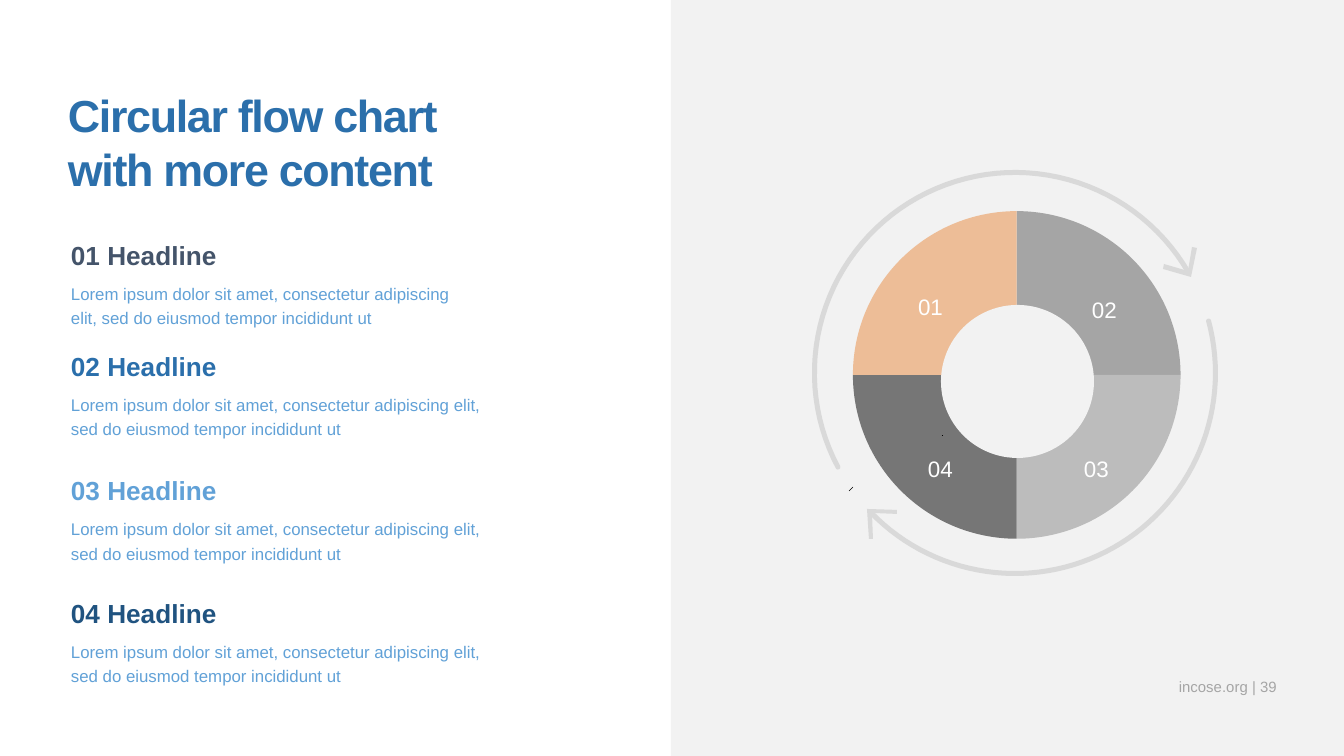
"""Build a slide with a four-part circular flow chart and matching headlines."""
import math
from dataclasses import dataclass
from typing import Any

from lxml import etree
from pptx import Presentation
from pptx import util as u
from pptx.chart import data as chart_data
from pptx.dml import color
from pptx.enum import chart as charts, shapes, text
from pptx.oxml import ns

SCALE = 914400 / 134.4
LOREM = ("Lorem ipsum dolor sit amet, consectetur adipiscing elit, "
         "sed do eiusmod tempor incididunt ut")


@dataclass(frozen=True)
class Theme:
    font: str = "Arial"
    white: str = "FFFFFF"
    panel: str = "F2F2F2"
    arrow: str = "D9D9D9"
    tick: str = "000000"
    title: str = "2B6FAB"
    body: str = "61A1D7"
    footer: str = "A5A5A5"
    slices: tuple = ("A5A5A5", "BCBCBC", "767676", "EDBD97")
    title_size: float = 24
    headline_size: float = 14
    label_size: float = 12
    chart_size: float = 10
    body_size: float = 9
    footer_size: float = 8


@dataclass(frozen=True)
class Box:
    left: int
    top: int
    width: int
    height: int

    def emu(self) -> tuple:
        return tuple(px(value) for value in (self.left, self.top, self.width, self.height))


@dataclass(frozen=True)
class Style:
    size: float
    color: str
    bold: bool = False
    align: Any = text.PP_ALIGN.LEFT
    anchor: Any = text.MSO_ANCHOR.TOP
    auto_size: Any = text.MSO_AUTO_SIZE.NONE
    line_spacing: Any = 1.0
    inset: tuple = (0, 0)
    tracking: int = 0


@dataclass(frozen=True)
class Topic:
    headline: str
    color: str
    top: int
    body_top: int
    body_width: int = 418


@dataclass(frozen=True)
class Label:
    words: str
    box: Box


@dataclass(frozen=True)
class FlowArrow:
    start: float
    end: float
    head: tuple


@dataclass(frozen=True)
class Tick:
    start: tuple
    end: tuple


THEME = Theme()
GROW = text.MSO_AUTO_SIZE.SHAPE_TO_FIT_TEXT
TITLE = Style(THEME.title_size, THEME.title, True, line_spacing=u.Pt(29), tracking=-70)
BODY = Style(THEME.body_size, THEME.body, auto_size=GROW, line_spacing=1.2, inset=(4, 7))
LABEL = Style(THEME.label_size, THEME.white, align=text.PP_ALIGN.CENTER,
              anchor=text.MSO_ANCHOR.MIDDLE, inset=(9, 5))
FOOTER = Style(THEME.footer_size, THEME.footer, align=text.PP_ALIGN.RIGHT,
               anchor=text.MSO_ANCHOR.BOTTOM, line_spacing=1.5)

TOPICS = (Topic("01 Headline", "44546A", 236, 273, 414),
          Topic("02 Headline", "2B6FAB", 347, 384),
          Topic("03 Headline", "61A1D7", 471, 508),
          Topic("04 Headline", "205380", 594, 631))
LABELS = (Label("01", Box(891, 273, 79, 68)), Label("02", Box(1071, 276, 67, 67)),
          Label("03", Box(1063, 435, 67, 67)), Label("04", Box(907, 435, 67, 67)))
FLOW_ARROWS = (
    FlowArrow(-118, 60, ((1163, 269), (1164, 264), (1188, 271),
                         (1192, 247), (1197, 248), (1191, 277))),
    FlowArrow(75, 226, ((897, 510), (897, 514), (872, 513),
                        (873, 539), (869, 539), (867, 509))))
TICKS = (Tick((849, 491), (853, 487)), Tick((942, 435), (943, 435)))


def px(value: float) -> int:
    return round(value * SCALE)


def rgb(code: str) -> color.RGBColor:
    return color.RGBColor.from_string(code)


def apply_format(target: Any, values: dict) -> None:
    for name, value in values.items():
        setattr(target, name, value)


def paint(shape: Any, fill: str) -> None:
    shape.shadow.inherit = False
    shape.fill.solid()
    shape.fill.fore_color.rgb = rgb(fill)
    shape.line.fill.background()


def write(shape: Any, words: str, style: Style) -> None:
    across, down = (px(value) for value in style.inset)
    frame = shape.text_frame
    apply_format(frame, {
        "word_wrap": True, "auto_size": style.auto_size, "vertical_anchor": style.anchor,
        "margin_left": across, "margin_right": across,
        "margin_top": down, "margin_bottom": down})
    paragraph = frame.paragraphs[0]
    apply_format(paragraph, {"alignment": style.align, "line_spacing": style.line_spacing})
    run = paragraph.add_run()
    run.text = words
    apply_format(run.font, {"name": THEME.font, "size": u.Pt(style.size), "bold": style.bold})
    run.font.color.rgb = rgb(style.color)
    if style.tracking:
        run.font._element.set("spc", str(style.tracking))


def add_text(slide: Any, box: Box, words: str, style: Style) -> None:
    write(slide.shapes.add_textbox(*box.emu()), words, style)


def add_topic(slide: Any, topic: Topic) -> None:
    headline = Style(THEME.headline_size, topic.color, True, auto_size=GROW,
                     line_spacing=0.9, inset=(4, 7))
    add_text(slide, Box(67, topic.top, 276, 42), topic.headline, headline)
    add_text(slide, Box(67, topic.body_top, topic.body_width, 62), LOREM, BODY)


def add_label(slide: Any, label: Label) -> None:
    shape = slide.shapes.add_shape(shapes.MSO_SHAPE.OVAL, *label.box.emu())
    shape.shadow.inherit = False
    shape.fill.background()
    shape.line.fill.background()
    write(shape, label.words, LABEL)


def add_filled(slide: Any, kind: Any, box: Box, fill: str) -> None:
    paint(slide.shapes.add_shape(kind, *box.emu()), fill)


def add_polygon(slide: Any, points: list, fill: str) -> None:
    first, *rest = [(px(x), px(y)) for x, y in points]
    builder = slide.shapes.build_freeform(*first, scale=1.0)
    builder.add_line_segments(rest, close=True)
    paint(builder.convert_to_shape(), fill)


def arc(center: tuple, radius: float, start: float, end: float, steps: int) -> list:
    angles = [math.radians(start + (end - start) * i / steps) for i in range(steps + 1)]
    return [(center[0] + radius * math.sin(a), center[1] - radius * math.cos(a)) for a in angles]


def add_flow_arrow(slide: Any, arrow: FlowArrow) -> None:
    center, radius, half = (1015, 373), 200.5, 2.5
    start, end = arrow.start, arrow.end
    tail, tip = (arc(center, radius, angle, angle, 1)[0] for angle in (start, end))
    band = (arc(center, radius + half, start, end, 60) + arc(tip, half, end, end + 180, 6)
            + arc(center, radius - half, end, start, 60)
            + arc(tail, half, start + 180, start + 360, 6))
    add_polygon(slide, band, THEME.arrow)
    add_polygon(slide, list(arrow.head), THEME.arrow)


def add_tick(slide: Any, tick: Tick) -> None:
    ends = [px(value) for value in tick.start + tick.end]
    connector = slide.shapes.add_connector(shapes.MSO_CONNECTOR.STRAIGHT, *ends)
    connector.line.width = u.Pt(0.25)
    connector.line.color.rgb = rgb(THEME.tick)
    etree.SubElement(connector._element.spPr, ns.qn("a:effectLst"))


def add_pie(slide: Any, box: Box) -> None:
    values = chart_data.CategoryChartData()
    values.categories = ["1", "2", "3", "4"]
    values.add_series("Series 1", [25] * 4)
    chart = slide.shapes.add_chart(charts.XL_CHART_TYPE.PIE, *box.emu(), values).chart
    apply_format(chart, {"has_legend": False, "has_title": False})
    apply_format(chart.font, {"name": THEME.font, "size": u.Pt(THEME.chart_size)})
    plot = chart.plots[0]
    plot.vary_by_categories = True
    for index, fill in enumerate(THEME.slices):
        point = plot.series[0].points[index].format
        point.fill.solid()
        point.fill.fore_color.rgb = rgb(fill)
        point.line.fill.background()
    area = chart._chartSpace.chart.plotArea
    for old in area.findall(ns.qn("c:layout")):
        area.remove(old)
    layout = etree.Element(ns.qn("c:layout"))
    manual = etree.SubElement(layout, ns.qn("c:manualLayout"))
    settings = {"layoutTarget": "inner", "xMode": "edge", "yMode": "edge",
                "x": 0.213, "y": 0.052, "w": 0.568, "h": 0.896}
    for name, value in settings.items():
        etree.SubElement(manual, ns.qn(f"c:{name}")).set("val", str(value))
    area.insert(0, layout)


def main() -> None:
    presentation = Presentation()
    apply_format(presentation, {"slide_width": px(1344), "slide_height": px(756)})
    slide = presentation.slides.add_slide(presentation.slide_layouts[6])
    add_filled(slide, shapes.MSO_SHAPE.RECTANGLE, Box(671, 0, 673, 756), THEME.panel)
    add_pie(slide, Box(730, 192, 577, 366))
    add_text(slide, Box(68, 87, 454, 54), "Circular flow chart with more content", TITLE)
    add_filled(slide, shapes.MSO_SHAPE.OVAL, Box(941, 305, 153, 153), THEME.panel)
    for draw, items in ((add_topic, TOPICS), (add_flow_arrow, FLOW_ARROWS),
                        (add_tick, TICKS), (add_label, LABELS)):
        for item in items:
            draw(slide, item)
    add_text(slide, Box(1159, 671, 118, 25), "incose.org | 39", FOOTER)
    presentation.save("out.pptx")


if __name__ == "__main__":
    main()
